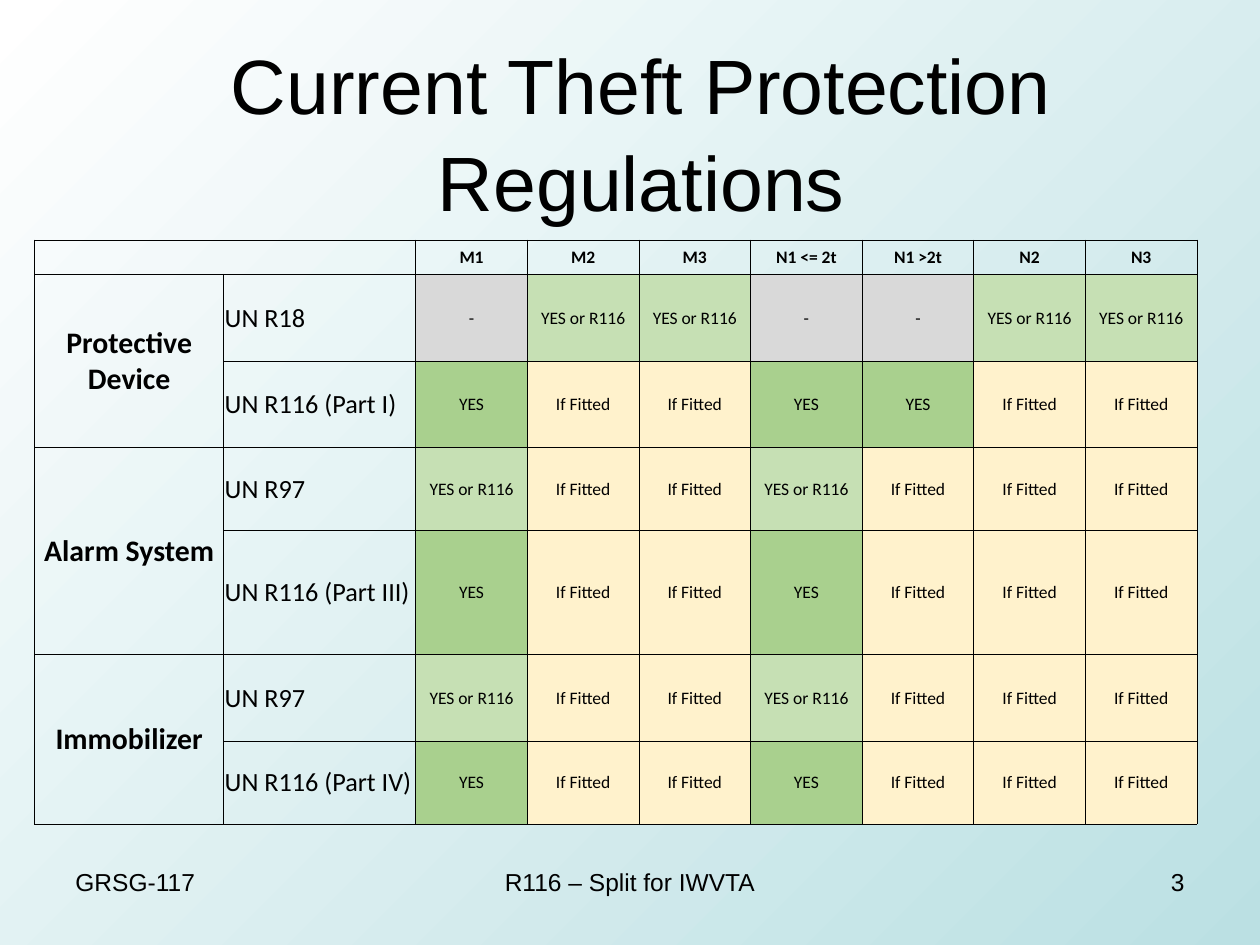
from lxml.etree import SubElement
from pptx import Presentation
from pptx.dml.color import RGBColor
from pptx.enum.text import MSO_ANCHOR as Anchor, PP_ALIGN as Align
from pptx.oxml.ns import qn
from pptx.util import Cm, Pt

COLORS = {
    "text": "000000",
    "border": "000000",
    "background_start": "FFFFFF",
    "background_end": "BBE0E3",
}
STATUS_FILLS = {
    "-": "D9D9D9",
    "YES": "A9D08E",
    "YES or R116": "C6E0B4",
    "If Fitted": "FFF2CC",
}
CATEGORIES = ["M1", "M2", "M3", "N1 <= 2t", "N1 >2t", "N2", "N3"]
SYSTEMS = ["Protective Device", "Alarm System", "Immobilizer"]

NONE, YES, EITHER, FITTED = STATUS_FILLS
# Status per category, in the order of CATEGORIES
R97_STATUS = [EITHER, FITTED, FITTED, EITHER, FITTED, FITTED, FITTED]
R116_STATUS = [YES, FITTED, FITTED, YES, FITTED, FITTED, FITTED]
REGULATIONS = [
    ("UN R18", [NONE, EITHER, EITHER, NONE, NONE, EITHER, EITHER]),
    ("UN R116 (Part I)", [YES, FITTED, FITTED, YES, YES, FITTED, FITTED]),
    ("UN R97", R97_STATUS),
    ("UN R116 (Part III)", R116_STATUS),
    ("UN R97", R97_STATUS),
    ("UN R116 (Part IV)", R116_STATUS),
]
COLUMN_WIDTHS = [3.81, 3.87] + [2.25] * len(CATEGORIES)
ROW_HEIGHTS = [0.69, 1.75, 1.74, 1.67, 2.5, 1.75, 1.67]


def set_background(page):
    fill = page.background.fill
    fill.gradient()
    fill.gradient_angle = 315
    for stop, name in zip(fill.gradient_stops, ["background_start", "background_end"]):
        stop.color.rgb = RGBColor.from_string(COLORS[name])


def write_text(frame, text, size, font_name, align, bold=False):
    frame.text = text
    para = frame.paragraphs[0]
    para.alignment = align
    for span in para.runs:
        span.font.name = font_name
        span.font.size = Pt(size)
        span.font.bold = bold
        span.font.color.rgb = RGBColor.from_string(COLORS["text"])


def add_text(page, box, text, size, align, line_spacing=1.0):
    frame = page.shapes.add_textbox(*map(Cm, box)).text_frame
    frame.word_wrap = True
    write_text(frame, text, size, "Arial", align)
    frame.paragraphs[0].line_spacing = line_spacing


def add_footer(page, box):
    left, top, width, height = box
    side_width, middle_width = 5.93, 8.04
    middle_left = left + (width - middle_width) / 2
    right_left = left + width - side_width
    add_text(page, (left, top, side_width, height), "GRSG-117", 14, Align.LEFT)
    add_text(page, (middle_left, top, middle_width, height),
             "R116 – Split for IWVTA", 14, Align.CENTER)
    add_text(page, (right_left, top, side_width, height), "3", 14, Align.RIGHT)


def add_borders(cell):
    """Put thin lines on all four sides, ahead of the fill as the schema asks."""
    properties = cell._tc.get_or_add_tcPr()
    for index, side in enumerate(["a:lnL", "a:lnR", "a:lnT", "a:lnB"]):
        line = SubElement(properties, qn(side), w=str(Pt(0.5)))
        solid = SubElement(line, qn("a:solidFill"))
        SubElement(solid, qn("a:srgbClr"), val=COLORS["border"])
        properties.insert(index, line)


def format_cell(cell):
    cell.vertical_anchor = Anchor.MIDDLE
    cell.margin_left = cell.margin_right = cell.margin_top = Cm(0.02)
    cell.margin_bottom = 0
    cell.fill.background()
    add_borders(cell)
    # Keeps cells without text from stretching their row
    SubElement(cell.text_frame.paragraphs[0]._p, qn("a:endParaRPr"), sz="1000")


def add_regulation_table(page, left, top):
    frame = page.shapes.add_table(
        len(ROW_HEIGHTS), len(COLUMN_WIDTHS), Cm(left), Cm(top),
        Cm(sum(COLUMN_WIDTHS)), Cm(sum(ROW_HEIGHTS)))
    table = frame.table
    table.first_row = table.horz_banding = False
    for column, width in zip(table.columns, COLUMN_WIDTHS):
        column.width = Cm(width)
    for row, height in zip(table.rows, ROW_HEIGHTS):
        row.height = Cm(height)
    for cell in table.iter_cells():
        format_cell(cell)

    def write_cell(row, column, text, size, align=Align.CENTER, bold=False):
        cell = table.cell(row, column)
        write_text(cell.text_frame, text, size, "Calibri", align, bold)
        return cell

    table.cell(0, 0).merge(table.cell(0, 1))
    for column, category in enumerate(CATEGORIES, 2):
        write_cell(0, column, category, 10, bold=True)
    for index, system in enumerate(SYSTEMS):
        row = 1 + 2 * index
        table.cell(row, 0).merge(table.cell(row + 1, 0))
        write_cell(row, 0, system, 17, bold=True)
    for row, (regulation, statuses) in enumerate(REGULATIONS, 1):
        write_cell(row, 1, regulation, 15, Align.LEFT)
        for column, status in enumerate(statuses, 2):
            fill = write_cell(row, column, status, 10).fill
            fill.solid()
            fill.fore_color.rgb = RGBColor.from_string(STATUS_FILLS[status])


def main():
    deck = Presentation()
    deck.slide_width, deck.slide_height = Cm(25.4), Cm(19.05)
    page = deck.slides.add_slide(deck.slide_layouts[6])
    set_background(page)
    add_text(page, (1.5, 0.53, 22.86, 3.18),
             "Current Theft Protection Regulations", 44, Align.CENTER, 1.05)
    add_footer(page, (1.27, 17.35, 22.86, 1.32))
    add_regulation_table(page, 0.7, 4.84)
    deck.save("out.pptx")


if __name__ == "__main__":
    main()
